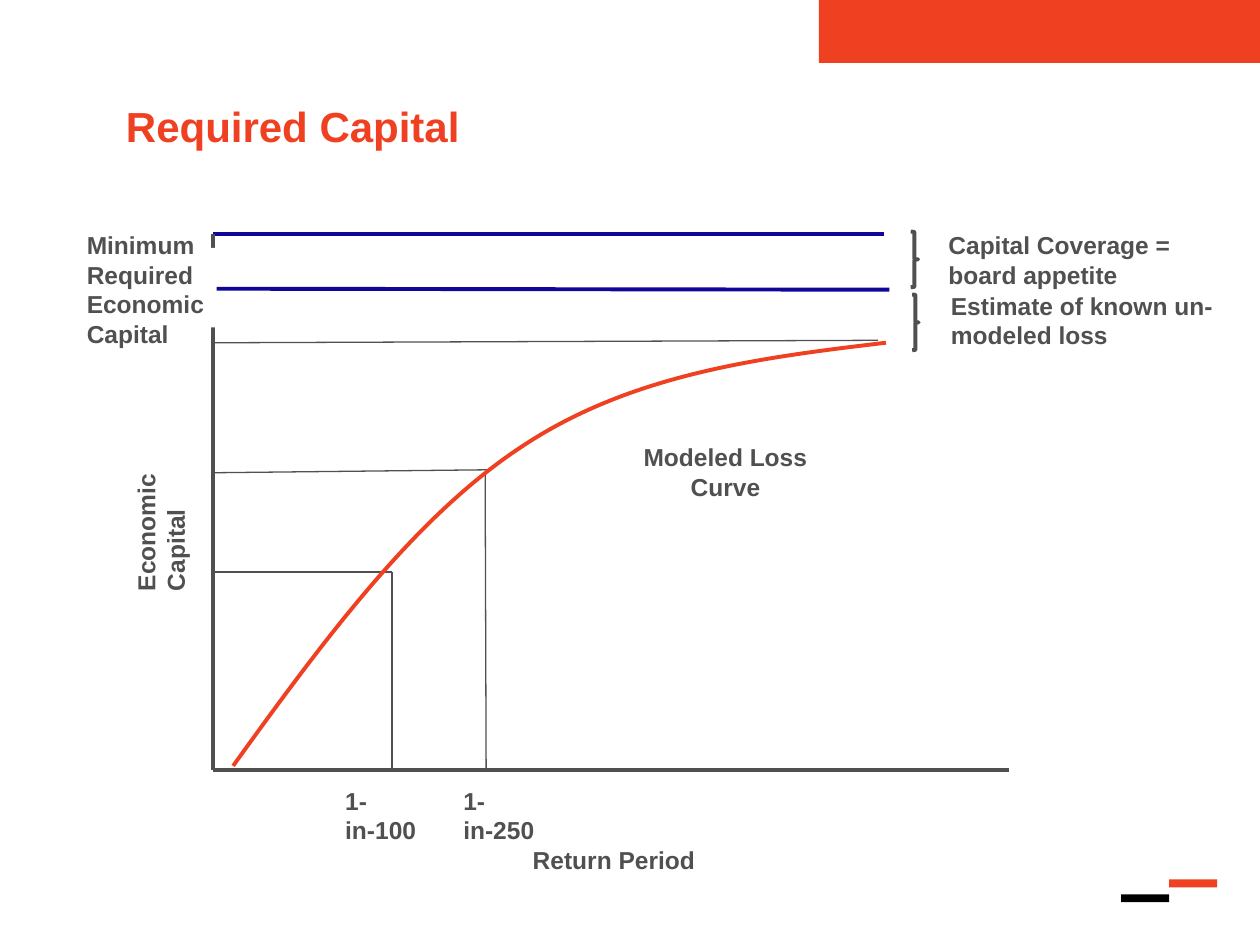
from lxml.etree import SubElement
from pptx import Presentation
from pptx.dml.color import RGBColor
from pptx.enum.shapes import MSO_CONNECTOR, MSO_SHAPE
from pptx.enum.text import MSO_ANCHOR, PP_ALIGN
from pptx.oxml.ns import qn
from pptx.util import Cm, Pt

RED = RGBColor(0xEF, 0x41, 0x22)
BLUE = RGBColor(0x11, 0x06, 0x9A)
GRAY = RGBColor(0x50, 0x50, 0x50)
BLACK = RGBColor(0, 0, 0)
WHITE = RGBColor(0xFF, 0xFF, 0xFF)

THICK, THIN = 2.25, 0.75
AXIS_X, AXIS_Y = 4.29, 15.52
CAPITAL_TOP = 4.72

BLOCKS = [
    (23.57, 17.73, 0.97, 0.16, RED),
    (22.6, 18.03, 0.97, 0.16, BLACK),
    (16.51, 0, 8.89, 1.27, RED),
]
LINES = [
    (AXIS_X, AXIS_Y, 20.35, AXIS_Y, GRAY, THICK),
    (7.9, 11.53, 7.9, AXIS_Y, GRAY, THIN),
    (9.8, AXIS_Y, 9.78, 9.55, GRAY, THIN),
    (7.9, 11.53, AXIS_X, 11.53, GRAY, THIN),
    (9.86, 9.47, AXIS_X, 9.53, GRAY, THIN),
    (AXIS_X, CAPITAL_TOP, 17.83, CAPITAL_TOP, BLUE, THICK),
    (AXIS_X, CAPITAL_TOP, AXIS_X, AXIS_Y, GRAY, THICK),
    (4.32, 5.82, 17.93, 5.84, BLUE, THICK),
    (17.7, 6.86, AXIS_X, 6.91, GRAY, THIN),
]
CURVE_START = (4.7, 15.44)
CURVE_SEGMENTS = [
    [(6.53, 12.9), (8.38, 10.39), (10.57, 8.97)],
    [(12.75, 7.54), (15.32, 7.21), (17.86, 6.91)],
]
BRACES = [(18.36, 4.67, 0.15, 1.12), (18.39, 5.94, 0.13, 1.12)]
LABELS = [
    (["1-in-100"], 6.71, 15.72, 2.36, 0.84),
    (["1-in-250"], 9.09, 15.72, 2.36, 0.84),
    (["Return Period"], 10.49, 16.92, 3.9, 0.84),
    (["Capital Coverage = board appetite"], 18.87, 4.52, 5.84, 1.45),
    (["Estimate of known un-", "modeled loss"], 18.92, 5.74, 5.87, 1.45),
    (["Minimum", "Required", "Economic", "Capital"], 1.5, 4.52, 3, 2.64),
]


def set_all(target, values):
    for name, value in values.items():
        setattr(target, name, value)


def add_block(slide, left, top, width, height, color):
    shape = slide.shapes.add_shape(
        MSO_SHAPE.RECTANGLE, Cm(left), Cm(top), Cm(width), Cm(height))
    shape.shadow.inherit = False
    shape.fill.solid()
    shape.fill.fore_color.rgb = color
    shape.line.fill.background()


def style_outline(shape, color, width):
    shape.line.color.rgb = color
    shape.line.width = Pt(width)


def add_line(slide, x1, y1, x2, y2, color, width):
    connector = slide.shapes.add_connector(
        MSO_CONNECTOR.STRAIGHT, Cm(x1), Cm(y1), Cm(x2), Cm(y2))
    style_outline(connector, color, width)
    SubElement(connector._element.spPr, qn("a:effectLst"))


def add_brace(slide, left, top, width, height):
    brace = slide.shapes.add_shape(
        MSO_SHAPE.RIGHT_BRACE, Cm(left), Cm(top), Cm(width), Cm(height))
    brace.shadow.inherit = False
    brace.fill.background()
    style_outline(brace, GRAY, THICK)


def add_curve(slide, start, segments):
    builder = slide.shapes.build_freeform(Cm(start[0]), Cm(start[1]))
    ends = [(Cm(segment[-1][0]), Cm(segment[-1][1])) for segment in segments]
    builder.add_line_segments(ends, close=False)
    curve = builder.convert_to_shape()
    curve.shadow.inherit = False
    curve.fill.background()
    style_outline(curve, RED, THICK)
    straight_parts = list(curve._element.iter(qn("a:lnTo")))
    for straight, segment in zip(straight_parts, segments):
        parent = straight.getparent()
        bezier = SubElement(parent, qn("a:cubicBezTo"))
        for x, y in segment:
            SubElement(bezier, qn("a:pt"), x=str(Cm(x) - curve.left),
                       y=str(Cm(y) - curve.top))
        parent.remove(straight)


def add_label(slide, lines, left, top, width, height, size=14, color=GRAY,
              alignment=PP_ALIGN.LEFT, rotation=0, frame_format=None):
    box = slide.shapes.add_textbox(Cm(left), Cm(top), Cm(width), Cm(height))
    box.rotation = rotation
    frame = box.text_frame
    set_all(frame, {"word_wrap": True, **(frame_format or {})})
    frame.text = "\n".join(lines)
    for paragraph in frame.paragraphs:
        paragraph.alignment = alignment
        set_all(paragraph.runs[0].font,
                {"name": "Arial", "size": Pt(size), "bold": True})
        paragraph.runs[0].font.color.rgb = color


def main():
    presentation = Presentation()
    set_all(presentation, {"slide_width": Cm(25.4), "slide_height": Cm(19.05)})
    slide = presentation.slides.add_slide(presentation.slide_layouts[6])

    for block in BLOCKS:
        add_block(slide, *block)
    title_format = {"margin_left": 0, "margin_right": 0, "margin_top": 0,
                    "margin_bottom": 0, "vertical_anchor": MSO_ANCHOR.MIDDLE}
    add_label(slide, ["Required Capital"], 2.54, 1.93, 22, 1.19, size=24,
              color=RED, frame_format=title_format)

    for line in LINES:
        add_line(slide, *line)
    add_curve(slide, CURVE_START, CURVE_SEGMENTS)
    for brace in BRACES:
        add_brace(slide, *brace)
    add_block(slide, 3.35, 5, 1.02, 1.6, WHITE)

    for label in LABELS:
        add_label(slide, *label)
    add_label(slide, ["Modeled Loss Curve"], 12.34, 8.79, 4.57, 1.45,
              alignment=PP_ALIGN.CENTER)
    add_label(slide, ["Economic Capital"], 0.81, 9.62, 4.25, 0.84,
              rotation=270)

    presentation.save("out.pptx")


if __name__ == "__main__":
    main()
